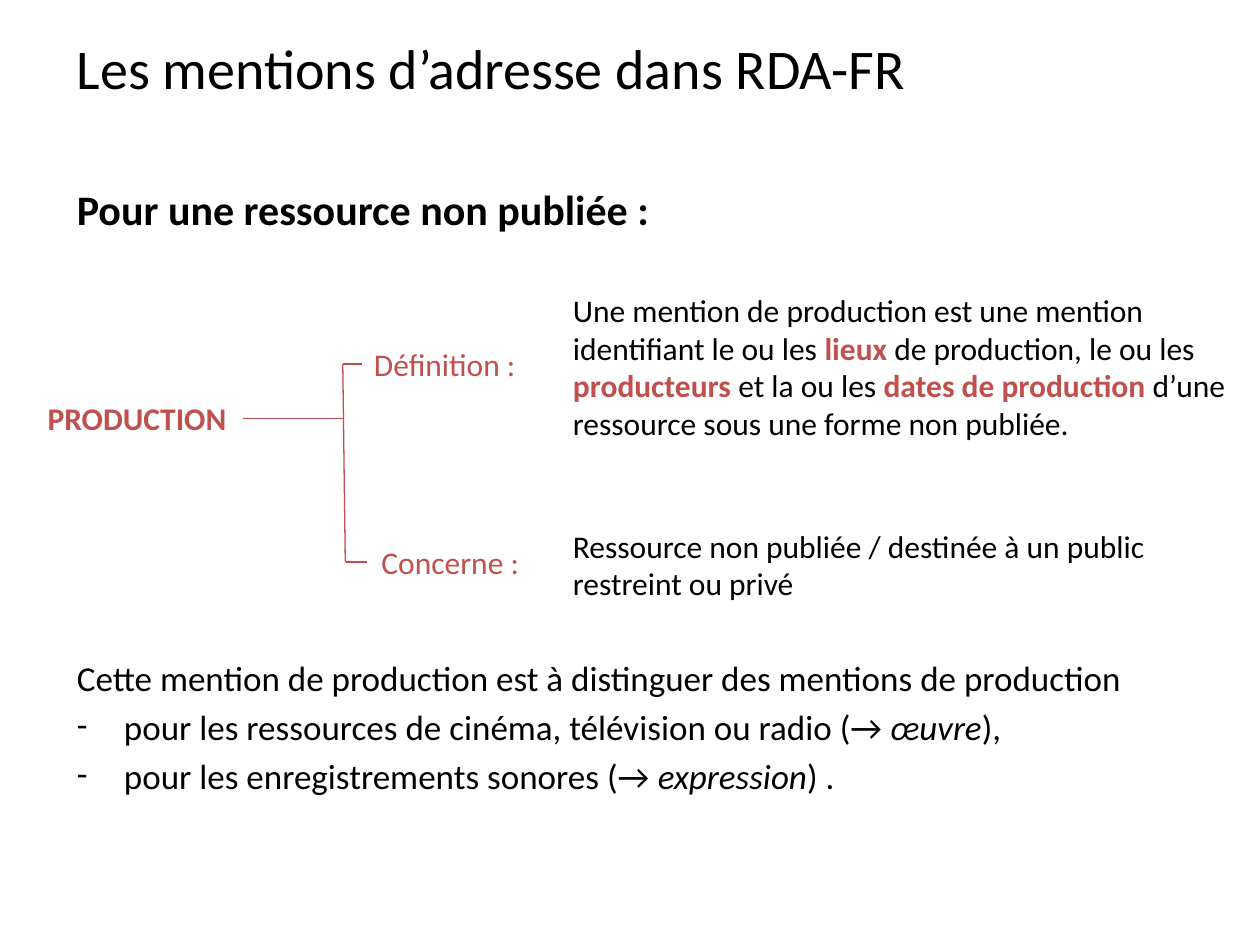
from dataclasses import dataclass

from lxml import etree
from pptx import Presentation
from pptx.dml.color import RGBColor
from pptx.enum.shapes import MSO_CONNECTOR
from pptx.enum.text import MSO_AUTO_SIZE, PP_ALIGN
from pptx.oxml.ns import qn
from pptx.util import Cm, Pt

STRAIGHT = MSO_CONNECTOR.STRAIGHT
NO_AUTOFIT = MSO_AUTO_SIZE.NONE
JUSTIFY = PP_ALIGN.JUSTIFY


@dataclass(frozen=True)
class Theme:
    font: str = "Calibri"
    text: RGBColor = RGBColor(0x00, 0x00, 0x00)
    accent: RGBColor = RGBColor(0xC0, 0x50, 0x4D)
    title: int = 32
    heading: int = 24
    closing: int = 20
    body: int = 18
    line: float = 0.75


THEME = Theme()


def add_runs(p, parts, size, color=THEME.text, bold=False):
    """Each part is plain text or (text, style), with style "key" or "italic"."""
    for part in parts:
        text, style = (part, None) if isinstance(part, str) else part
        r = p.add_run()
        r.text = text
        r.font.name = THEME.font
        r.font.size = Pt(size)
        r.font.bold = bold or style == "key"
        r.font.italic = style == "italic"
        r.font.color.rgb = THEME.accent if style == "key" else color


def add_text(slide, box, parts, size, **style):
    sp = slide.shapes.add_textbox(*(Cm(v) for v in box))
    tf = sp.text_frame
    tf.word_wrap = True
    tf.auto_size = NO_AUTOFIT
    add_runs(tf.paragraphs[0], parts, size, **style)
    return tf


def add_line(slide, x1, y1, x2, y2):
    line = slide.shapes.add_connector(STRAIGHT, Cm(x1), Cm(y1), Cm(x2), Cm(y2))
    line.line.color.rgb = THEME.accent
    line.line.width = Pt(THEME.line)
    etree.SubElement(line._element.spPr, qn("a:effectLst"))


def set_dash(p, indent):
    pPr = p._p.get_or_add_pPr()
    pPr.set("marL", str(Cm(indent)))
    pPr.set("indent", str(-Cm(indent)))
    etree.SubElement(pPr, qn("a:buFont")).set("typeface", THEME.font)
    etree.SubElement(pPr, qn("a:buChar")).set("char", "-")


def add_headings(slide, x, y, w):
    add_text(slide, (x, y, w, 1.65), ["Les mentions d’adresse dans RDA-FR"], THEME.title)
    add_text(slide, (x, y + 3.03, w, 1.27), ["Pour une ressource non publiée :"],
             THEME.heading, bold=True)


def add_tree(slide, x, y, w):
    # Root and branch labels
    label_h = 1.02
    add_text(slide, (x, y + 2.18, 4.6, label_h), ["PRODUCTION"],
             THEME.body, color=THEME.accent, bold=True)
    for text, dx, dy in (("Définition :", 6.58, 1.09), ("Concerne :", 6.73, 5.08)):
        add_text(slide, (x + dx, y + dy, 3.94, label_h), [text],
                 THEME.body, color=THEME.accent)

    # Branch contents
    content_x = 10.59
    definition = [
        "Une mention de production est une mention identifiant le ou les ",
        ("lieux", "key"),
        " de production, le ou les ",
        ("producteurs", "key"),
        " et la ou les ",
        ("dates de production ", "key"),
        "d’une ressource sous une forme non publiée.",
    ]
    scope = ["Ressource non publiée / destinée à un public restreint ou privé"]
    add_text(slide, (x + content_x, y, w - content_x - 0.4, 3.33), definition, THEME.body)
    add_text(slide, (x + content_x, y + 4.75, w - content_x, 1.8), scope, THEME.body)

    # Bracket: stem, spine, upper and lower arms
    for x1, y1, x2, y2 in (
        (4.19, 2.69, 6.2, 2.69),
        (6.25, 5.59, 6.2, 1.6),
        (6.2, 1.6, 6.58, 1.6),
        (6.27, 5.59, 6.68, 5.59),
    ):
        add_line(slide, x + x1, y + y1, x + x2, y + y2)


def add_closing(slide, x, y, w):
    intro = ["Cette mention de production est à distinguer des mentions de production"]
    items = [
        ["pour les ressources de cinéma, télévision ou radio (→ ", ("œuvre", "italic"), "),"],
        ["pour les enregistrements sonores (→ ", ("expression", "italic"), ") ."],
    ]
    tf = add_text(slide, (x, y, w, 3.2), intro, THEME.closing)
    tf.paragraphs[0].alignment = JUSTIFY
    for item in items:
        p = tf.add_paragraph()
        p.alignment = JUSTIFY
        p.space_before = Pt(4)
        set_dash(p, 0.95)
        add_runs(p, item, THEME.closing)


def main():
    prs = Presentation()
    prs.slide_width, prs.slide_height = Cm(25.4), Cm(19.05)
    slide = prs.slides.add_slide(prs.slide_layouts[6])
    add_headings(slide, 1.3, 0.55, 22.86)
    add_tree(slide, 0.71, 5.74, 24.69)
    add_closing(slide, 1.3, 13.1, 22.86)
    prs.save("out.pptx")


if __name__ == "__main__":
    main()
